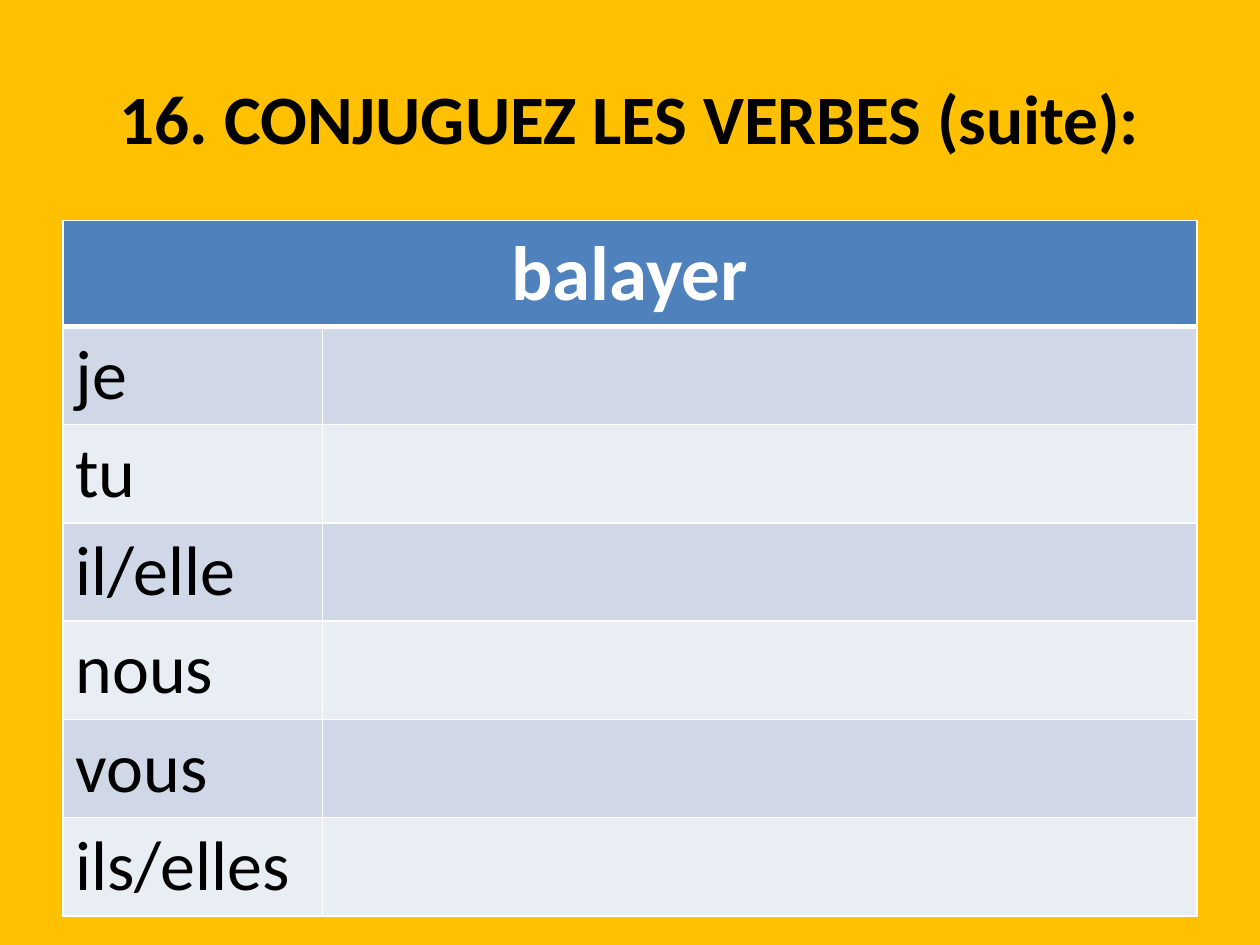
from dataclasses import dataclass

from lxml import etree
from pptx import Presentation
from pptx import util as u
from pptx.dml.color import RGBColor
from pptx.enum import text
from pptx.oxml import ns

COLORS = {"background": "FFC000", "header": "4F81BD", "odd": "D0D8E8",
          "even": "E9EDF4", "ink": "000000", "white": "FFFFFF"}
PRONOUNS = ["je", "tu", "il/elle", "nous", "vous", "ils/elles"]
COLUMN_WIDTHS = [2.06, 6.94]
HEADER_HEIGHT, ROW_HEIGHT = 0.84, 0.78


@dataclass
class TextStyle:
    size: float
    color: str
    bold: bool = False
    align: text.PP_ALIGN = text.PP_ALIGN.LEFT


TITLE = TextStyle(39.6, "ink", True, text.PP_ALIGN.CENTER)
HEADER = TextStyle(44, "white", True, text.PP_ALIGN.CENTER)
PRONOUN = TextStyle(40, "ink")


def rgb(name: str) -> RGBColor:
    return RGBColor.from_string(COLORS[name])


def write(tf, words: str, style: TextStyle) -> None:
    p = tf.paragraphs[0]
    p.alignment = style.align
    r = p.add_run()
    r.text = words
    font_format = {"name": "Calibri", "size": u.Pt(style.size), "bold": style.bold}
    for name, value in font_format.items():
        setattr(r.font, name, value)
    r.font.color.rgb = rgb(style.color)


def paint(cell, fill: str, **widths: float) -> None:
    tc_pr = cell._tc.get_or_add_tcPr()
    for side in ("lnL", "lnR", "lnT", "lnB"):
        ln = etree.SubElement(tc_pr, ns.qn(f"a:{side}"), w=str(u.Pt(widths.get(side, 1))))
        solid = etree.SubElement(ln, ns.qn("a:solidFill"))
        etree.SubElement(solid, ns.qn("a:srgbClr"), val=COLORS["white"])
    cell.fill.solid()
    cell.fill.fore_color.rgb = rgb(fill)


def add_title(slide, words: str) -> None:
    sp = slide.shapes.add_textbox(u.Inches(0.5), u.Inches(0.3), u.Inches(9), u.Inches(1.25))
    tf = sp.text_frame
    frame_format = {"word_wrap": True, "vertical_anchor": text.MSO_ANCHOR.MIDDLE}
    for name, value in frame_format.items():
        setattr(tf, name, value)
    write(tf, words, TITLE)


def add_conjugation(slide, verb: str) -> None:
    height = HEADER_HEIGHT + ROW_HEIGHT * len(PRONOUNS)
    table = slide.shapes.add_table(
        len(PRONOUNS) + 1, len(COLUMN_WIDTHS), u.Inches(0.5), u.Inches(1.75),
        u.Inches(sum(COLUMN_WIDTHS)), u.Inches(height)).table
    for column, width in zip(table.columns, COLUMN_WIDTHS):
        column.width = u.Inches(width)
    for i, row in enumerate(table.rows):
        row.height = u.Inches(ROW_HEIGHT if i else HEADER_HEIGHT)
        for cell in row.cells:
            if i == 0:
                paint(cell, "header", lnB=3)
            else:
                paint(cell, "odd" if i % 2 else "even", lnT=3 if i == 1 else 1)
    table.cell(0, 0).merge(table.cell(0, 1))
    write(table.cell(0, 0).text_frame, verb, HEADER)
    for i, pronoun in enumerate(PRONOUNS, 1):
        write(table.cell(i, 0).text_frame, pronoun, PRONOUN)


def main() -> None:
    """Build the conjugation exercise slide."""
    prs = Presentation()
    prs.slide_width, prs.slide_height = u.Inches(10), u.Inches(7.5)
    slide = prs.slides.add_slide(prs.slide_layouts[6])
    fill = slide.background.fill
    fill.solid()
    fill.fore_color.rgb = rgb("background")
    add_title(slide, "16. CONJUGUEZ LES VERBES (suite):")
    add_conjugation(slide, "balayer")
    prs.save("out.pptx")


if __name__ == "__main__":
    main()
